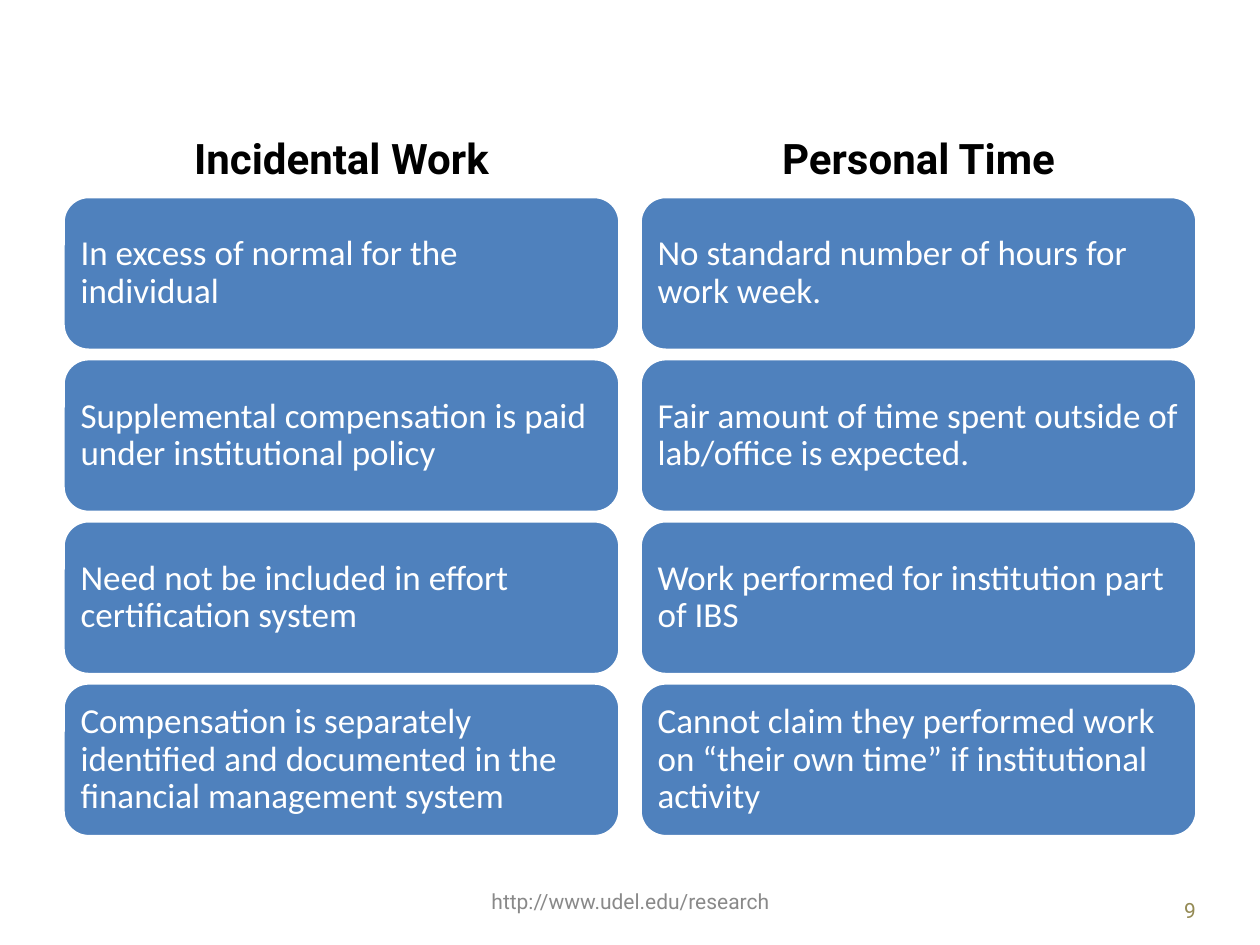
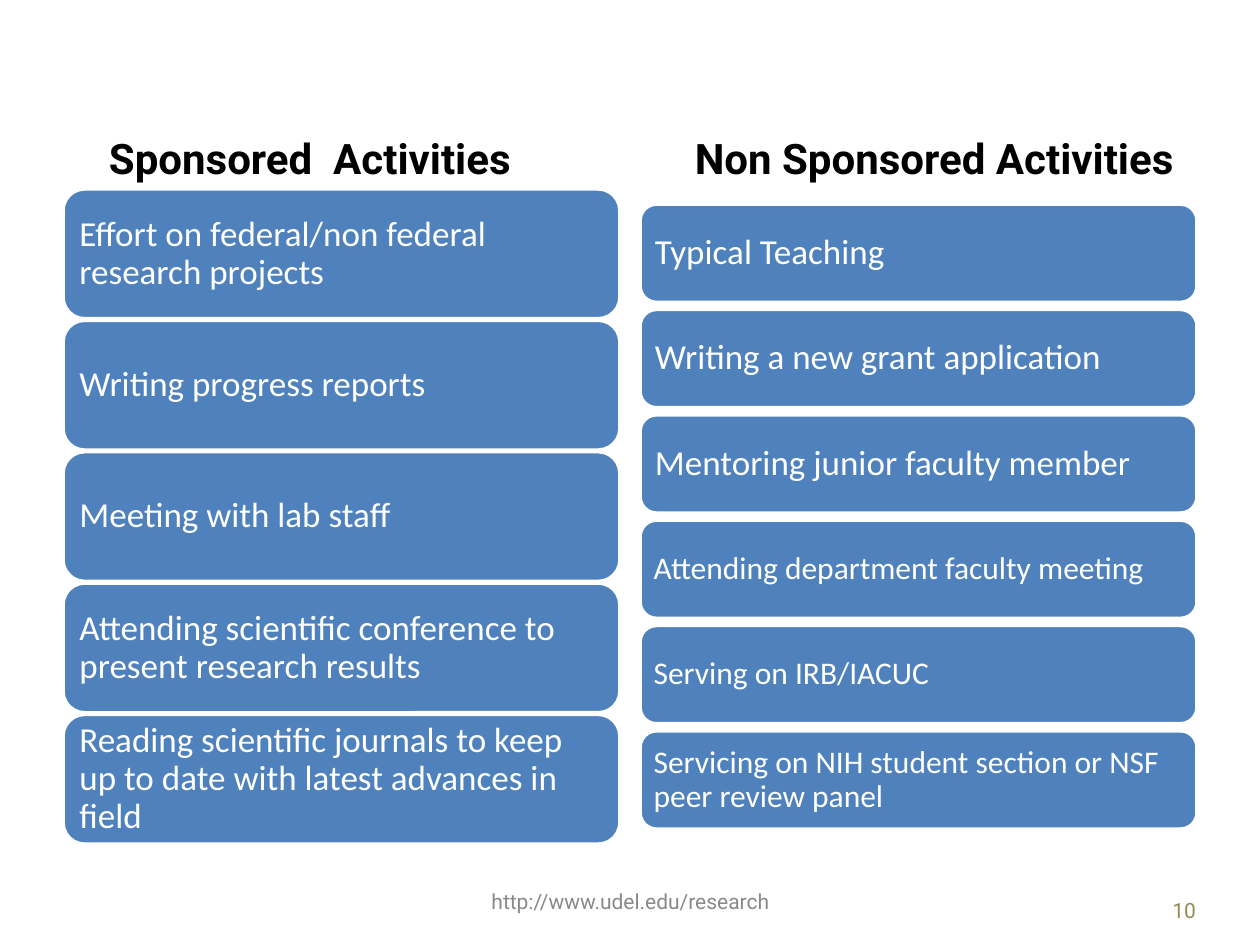
from pptx import Presentation
from pptx.dml.color import RGBColor
from pptx.enum.shapes import MSO_SHAPE as SHAPE
from pptx.enum.text import MSO_ANCHOR as ANCHOR, PP_ALIGN as ALIGN
from pptx.util import Inches, Pt

BLUE, WHITE, BLACK, GREY, OLIVE = "4F81BD", "FFFFFF", "000000", "898989", "948A54"
COLUMN_LEFTS = (0.5, 5.08)
COLUMN_WIDTH = 4.42

SLIDES = [
    {"number": 9, "columns": [
        {"heading": ("Incidental Work", (0.5, 0.92, 4.42, 0.58)),
         "top": 1.56, "bottom": 6.64, "height": 1.22,
         "cards": [("In excess of normal for the individual", 20),
                   ("Supplemental compensation is paid under institutional policy", 20),
                   ("Need not be included in effort certification system", 20),
                   ("Compensation is separately identified and documented in the "
                    "financial management system", 20)]},
        {"heading": ("Personal Time", (5.08, 0.92, 4.42, 0.58)),
         "top": 1.56, "bottom": 6.64, "height": 1.22,
         "cards": [("No standard number of hours for work week.", 20),
                   ("Fair amount of time spent outside of lab/office is expected.", 20),
                   ("Work performed for institution part of IBS", 20),
                   ("Cannot claim they performed work on “their own time” if "
                    "institutional activity", 20)]},
    ]},
    {"number": 10, "columns": [
        {"heading": ("Sponsored  Activities", (0, 1, 4.92, 0.5)),
         "top": 1.5, "bottom": 6.7, "height": 1.03,
         "cards": [("Effort on federal/non federal research projects", 20),
                   ("Writing progress reports", 20),
                   ("Meeting with lab staff", 20),
                   ("Attending scientific conference to present research results", 20),
                   ("Reading scientific journals to keep up to date with latest "
                    "advances in field", 20)]},
        {"heading": ("Non Sponsored Activities", (5.08, 1, 4.67, 0.5)),
         "top": 1.62, "bottom": 6.58, "height": 0.78,
         "cards": [("Typical Teaching", 20),
                   ("Writing a new grant application", 20),
                   ("Mentoring junior faculty member", 20),
                   ("Attending department faculty meeting", 18),
                   ("Serving on IRB/IACUC", 18),
                   ("Servicing on NIH student section or NSF peer review panel", 18)]},
    ]},
]


def rgb(value):
    return RGBColor.from_string(value)


def apply_format(target, values):
    for name, value in values.items():
        setattr(target, name, value)


class Deck:
    HEADING = {"name": "Roboto", "size": Pt(24), "bold": True}
    FOOTER = {"name": "Roboto", "size": Pt(12)}
    CARD = {"name": "Calibri"}

    def __init__(self):
        self.prs = Presentation()
        apply_format(self.prs, {"slide_width": Inches(10), "slide_height": Inches(7.5)})
        self.s = None

    def new_slide(self):
        self.s = self.prs.slides.add_slide(self.prs.slide_layouts.get_by_name("Comparison"))
        placeholders = {ph.placeholder_format.idx: ph for ph in self.s.placeholders}
        self.headings = [placeholders.pop(idx) for idx in (1, 3)]
        for ph in placeholders.values():
            ph.element.getparent().remove(ph.element)

    def add_text(self, sp, text, font, color, align, anchor=ANCHOR.MIDDLE):
        tf = sp.text_frame
        apply_format(tf, {"word_wrap": True, "vertical_anchor": anchor})
        p = tf.paragraphs[0]
        p.alignment = align
        r = p.add_run()
        r.text = text
        apply_format(r.font, font)
        r.font.color.rgb = rgb(color)
        return tf

    def heading(self, sp, text, box):
        names = ("left", "top", "width", "height")
        apply_format(sp, dict(zip(names, map(Inches, box))))
        self.add_text(sp, text, self.HEADING, BLACK, ALIGN.CENTER, ANCHOR.BOTTOM)

    def card(self, text, size, left, top, height):
        sp = self.s.shapes.add_shape(SHAPE.ROUNDED_RECTANGLE, Inches(left), Inches(top),
                                     Inches(COLUMN_WIDTH), Inches(height))
        sp.shadow.inherit = False
        sp.fill.solid()
        sp.fill.fore_color.rgb = rgb(BLUE)
        sp.line.color.rgb = rgb(WHITE)
        sp.line.width = Pt(2)
        tf = self.add_text(sp, text, {**self.CARD, "size": Pt(size)}, WHITE, ALIGN.LEFT)
        inset = Inches(0.08 if size == 20 else 0.07)
        apply_format(tf, {f"margin_{side}": inset for side in ("left", "top", "right", "bottom")})
        tf.paragraphs[0].line_spacing = 0.9

    def column(self, sp, left, heading, top, bottom, height, cards):
        self.heading(sp, *heading)
        pitch = (bottom - top - height) / (len(cards) - 1)
        for i, (text, size) in enumerate(cards):
            self.card(text, size, left, top + i * pitch, height)

    def footer(self, text, box, color, align):
        sp = self.s.shapes.add_textbox(*map(Inches, box))
        self.add_text(sp, text, self.FOOTER, color, align)


def main():
    deck = Deck()
    for slide in SLIDES:
        deck.new_slide()
        for sp, left, column in zip(deck.headings, COLUMN_LEFTS, slide["columns"]):
            deck.column(sp, left, **column)
        deck.footer("http://www.udel.edu/research", (3.42, 6.95, 3.17, 0.4), GREY, ALIGN.CENTER)
        deck.footer(str(slide["number"]), (8.67, 7.02, 0.92, 0.4), OLIVE, ALIGN.RIGHT)
    deck.prs.save("out.pptx")


if __name__ == "__main__":
    main()
